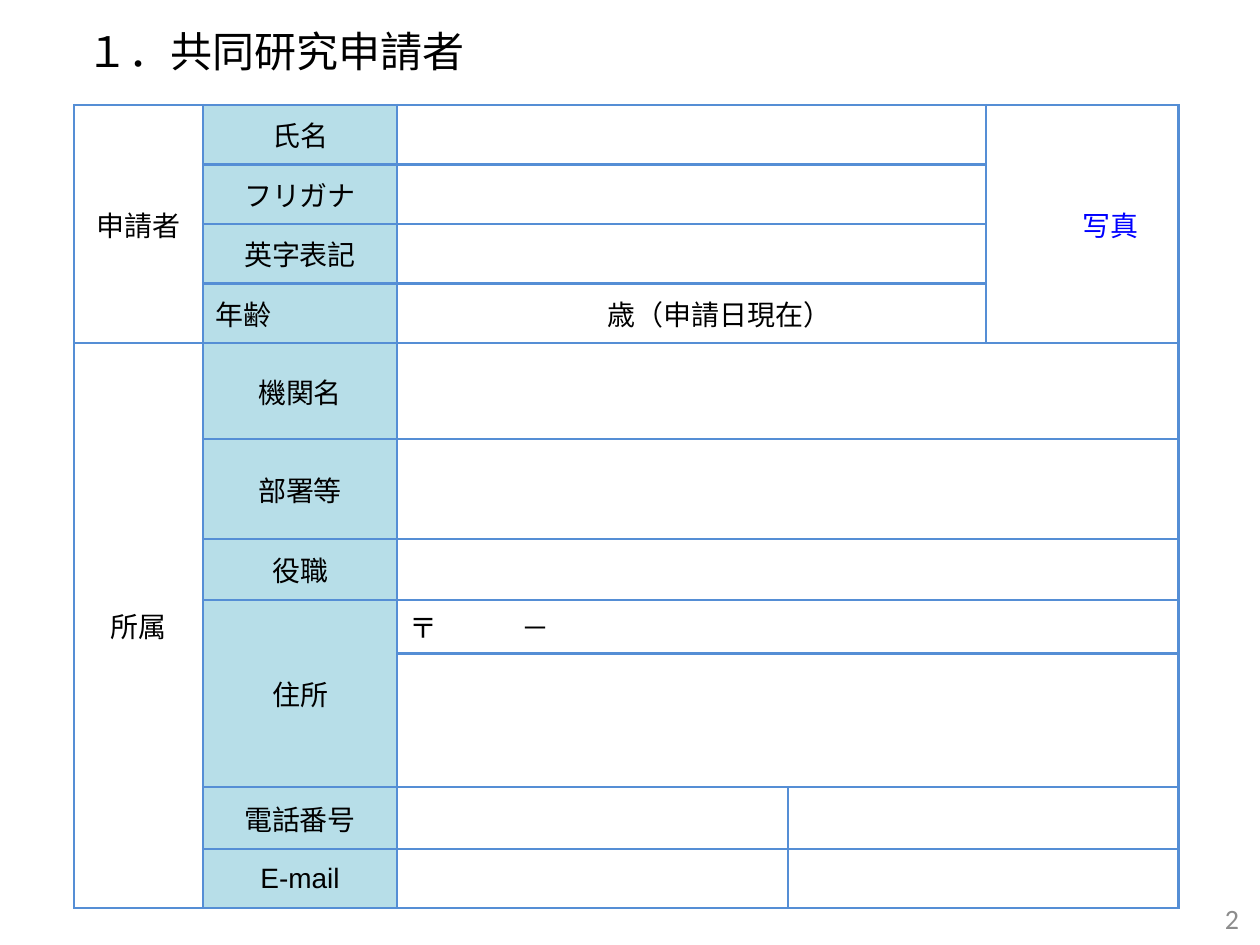
from dataclasses import dataclass

from lxml.etree import SubElement
from pptx import Presentation
from pptx.dml.color import RGBColor
from pptx.enum.text import MSO_ANCHOR as Anchor, PP_ALIGN as Align
from pptx.oxml import parse_xml
from pptx.oxml.ns import nsdecls, qn
from pptx.util import Pt


@dataclass(frozen=True)
class Theme:
    ink: str = "000000"
    photo: str = "0000FF"
    page: str = "8C8C8C"
    label: str = "B7DEE8"
    border: str = "558ED5"
    border_width: float = 1.5
    heading_font: str = "Calibri"
    table_font: str = "Arial"
    title_size: int = 24
    body_size: int = 16


THEME = Theme()
TITLE = "１．共同研究申請者"
PAGE_NUMBER = "2"

TABLE_LEFT, TABLE_TOP = 42.5, 60
COLUMN_WIDTHS = [73.5, 111, 223.5, 113, 110]
ROW_HEIGHTS = [34] * 4 + [55, 57, 35, 30.5, 76.5, 35.5, 33.5]
MARGIN_X, MARGIN_Y = 7.2, 3.6

# (first row, rows spanned, text)
GROUPS = [(0, 4, "申請者"), (4, 7, "所属")]
LABELS = [
    (0, 1, "氏名"), (1, 1, "フリガナ"), (2, 1, "英字表記"), (3, 1, "年齢"),
    (4, 1, "機関名"), (5, 1, "部署等"), (6, 1, "役職"), (7, 2, "住所"),
    (9, 1, "電話番号"), (10, 1, "E-mail"),
]
# (first column, columns spanned, rows) of the entry fields
FIELDS = [(2, 2, range(0, 4)), (2, 3, range(4, 9)), (3, 2, range(9, 11))]


def add_run(paragraph, text, font_name, size, color):
    run = paragraph.add_run()
    run.text = text
    run.font.name = font_name
    run.font.size = Pt(size)
    run.font.color.rgb = RGBColor.from_string(color)


def add_text_box(slide, box, text, size, color, align):
    shape = slide.shapes.add_textbox(*map(Pt, box))
    frame = shape.text_frame
    frame.word_wrap = True
    frame.vertical_anchor = Anchor.MIDDLE
    paragraph = frame.paragraphs[0]
    paragraph.alignment = align
    add_run(paragraph, text, THEME.heading_font, size, color)


def set_borders(cell):
    properties = cell._tc.get_or_add_tcPr()
    for index, side in enumerate(("lnL", "lnR", "lnT", "lnB")):
        line = parse_xml(
            f'<a:{side} {nsdecls("a")} w="{Pt(THEME.border_width)}"><a:solidFill>'
            f'<a:srgbClr val="{THEME.border}"/></a:solidFill></a:{side}>'
        )
        properties.insert(index, line)


def merge(table, row, column, rows, columns):
    cell = table.cell(row, column)
    if rows * columns > 1:
        cell.merge(table.cell(row + rows - 1, column + columns - 1))
    return cell


def write(cell, text, align=Align.CENTER, color=THEME.ink, indent=0):
    cell.margin_left = Pt(MARGIN_X + indent)
    paragraph = cell.text_frame.paragraphs[0]
    paragraph.alignment = align
    add_run(paragraph, text, THEME.table_font, THEME.body_size, color)
    return paragraph


def add_tab_stop(paragraph, position):
    tabs = SubElement(paragraph._p.get_or_add_pPr(), qn("a:tabLst"))
    SubElement(tabs, qn("a:tab"), pos=str(Pt(position)), algn="l")


def add_form_table(slide):
    box = TABLE_LEFT, TABLE_TOP, sum(COLUMN_WIDTHS), sum(ROW_HEIGHTS)
    table = slide.shapes.add_table(
        len(ROW_HEIGHTS), len(COLUMN_WIDTHS), *map(Pt, box)
    ).table
    table.first_row = table.horz_banding = False
    for column, width in zip(table.columns, COLUMN_WIDTHS):
        column.width = Pt(width)
    for row, height in zip(table.rows, ROW_HEIGHTS):
        row.height = Pt(height)
    for cell in table.iter_cells():
        cell.margin_left = cell.margin_right = Pt(MARGIN_X)
        cell.margin_top = cell.margin_bottom = Pt(MARGIN_Y)
        cell.vertical_anchor = Anchor.MIDDLE
        cell.fill.background()
        cell.text_frame.paragraphs[0].font.size = Pt(THEME.body_size)
        set_borders(cell)

    for row, span, text in GROUPS:
        write(merge(table, row, 0, span, 1), text)
    for row, span, text in LABELS:
        cell = merge(table, row, 1, span, 1)
        cell.fill.solid()
        cell.fill.fore_color.rgb = RGBColor.from_string(THEME.label)
        write(cell, text, Align.LEFT if text == "年齢" else Align.CENTER)
    for column, span, rows in FIELDS:
        for row in rows:
            merge(table, row, column, 1, span)

    em = THEME.body_size
    photo = merge(table, 0, 4, 4, 1)
    write(photo, "写真", Align.LEFT, THEME.photo, indent=3 * em)
    write(table.cell(3, 2), "歳（申請日現在）", indent=2 * em)
    postcode = write(table.cell(7, 2), "〒\t－", Align.LEFT)
    add_tab_stop(postcode, 4 * em)


def main():
    presentation = Presentation()
    presentation.slide_width, presentation.slide_height = Pt(720), Pt(540)
    slide = presentation.slides.add_slide(presentation.slide_layouts[6])
    add_text_box(slide, (547, 510.5, 168, 29), PAGE_NUMBER,
                 THEME.body_size, THEME.page, Align.RIGHT)
    add_form_table(slide)
    add_text_box(slide, (42.5, 3.5, 323, 50.5), TITLE,
                 THEME.title_size, THEME.ink, Align.LEFT)
    presentation.save("out.pptx")


if __name__ == "__main__":
    main()
